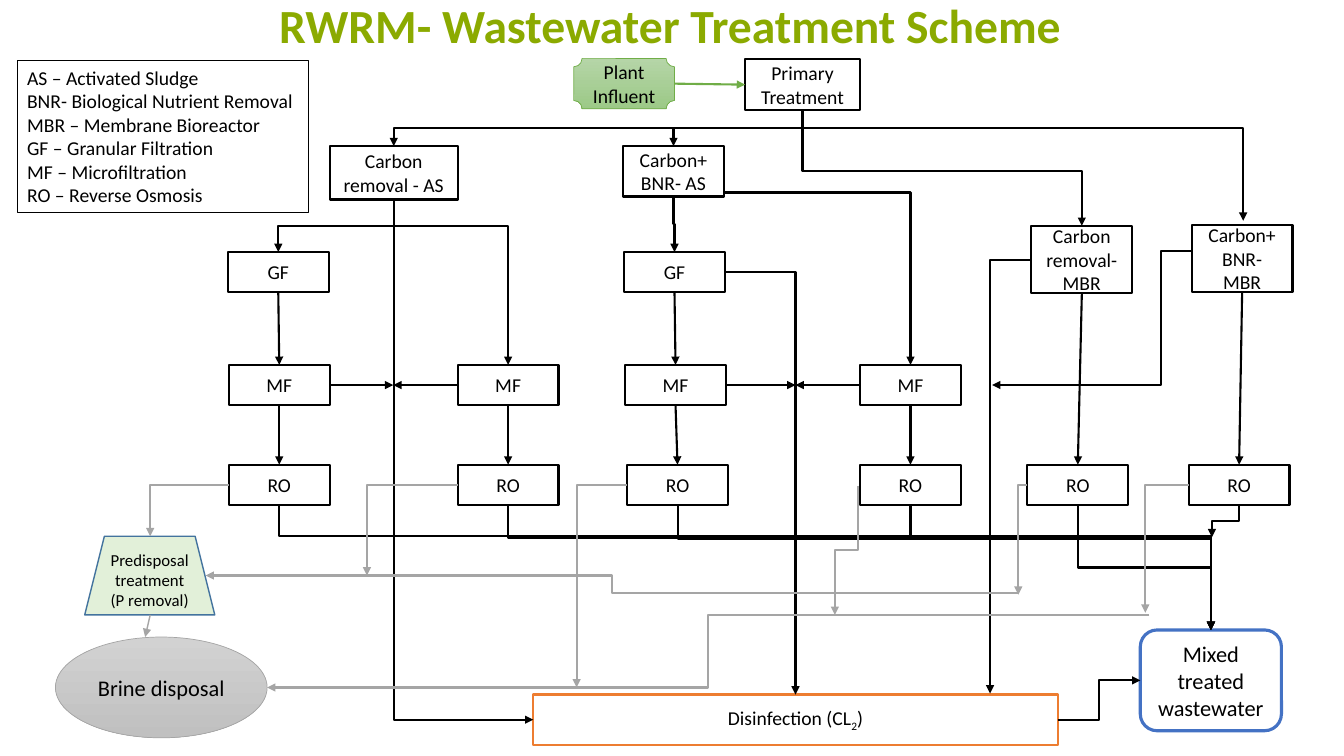
import pptx
import pptx.dml.color
import pptx.enum.shapes
import pptx.enum.text
import pptx.oxml
import pptx.oxml.ns
import pptx.util

RGBColor = pptx.dml.color.RGBColor
Shapes = pptx.enum.shapes.MSO_SHAPE
Connectors = pptx.enum.shapes.MSO_CONNECTOR
Align = pptx.enum.text.PP_ALIGN
Anchor = pptx.enum.text.MSO_ANCHOR

BLACK = RGBColor(0x00, 0x00, 0x00)
WHITE = RGBColor(0xFF, 0xFF, 0xFF)
OLIVE = RGBColor(0x8B, 0xAA, 0x00)
GREEN = RGBColor(0x70, 0xAD, 0x47)
LIGHT_GREEN = RGBColor(0xB5, 0xD5, 0xA7)
MID_GREEN = RGBColor(0x9C, 0xC9, 0x87)
PALE_GREEN = RGBColor(0xE2, 0xF0, 0xD9)
GREY = RGBColor(0xA5, 0xA5, 0xA5)
LIGHT_GREY = RGBColor(0xD2, 0xD2, 0xD2)
MID_GREY = RGBColor(0xC0, 0xC0, 0xC0)
ORANGE = RGBColor(0xED, 0x7D, 0x31)
BLUE = RGBColor(0x44, 0x72, 0xC4)
DARK_BLUE = RGBColor(0x43, 0x73, 0x9E)
TOP, LEFT, BOTTOM, RIGHT = range(4)


def inches(value):
    return pptx.util.Cm(value * 2.54)


def write_text(frame, text, size=14, color=BLACK, bold=False,
               align=Align.CENTER, anchor=Anchor.MIDDLE):
    frame.word_wrap = True
    frame.vertical_anchor = anchor
    for index, line in enumerate(text.split("\n")):
        paragraph = frame.add_paragraph() if index else frame.paragraphs[0]
        paragraph.alignment = align
        for part, piece in enumerate(line.split("_")):
            run = paragraph.add_run()
            run.text = piece
            run.font.name = "Calibri"
            run.font.size = pptx.util.Pt(size)
            run.font.bold = bold
            run.font.color.rgb = color
            if part % 2:
                run.font._element.set("baseline", "-25000")


class FlowSlide:
    def __init__(self, slide):
        self.slide = slide
        self.boxes = {}

    def title(self, text, left, top, width, height):
        title = self.slide.shapes.title
        title.left, title.top = inches(left), inches(top)
        title.width, title.height = inches(width), inches(height)
        write_text(title.text_frame, text, size=34, color=OLIVE, bold=True,
                   anchor=Anchor.BOTTOM)

    def box(self, name, text, left, top, width=1, height=0.4, kind=Shapes.RECTANGLE,
            fill=(), line=BLACK, weight=1.5, **text_format):
        shape = self.slide.shapes.add_shape(
            kind, inches(left), inches(top), inches(width), inches(height))
        shape.shadow.inherit = False
        if len(fill) == 2:
            shape.fill.gradient()
            shape.fill.gradient_angle = 270
            for stop, color in zip(shape.fill.gradient_stops, fill):
                stop.color.rgb = color
        elif fill:
            shape.fill.solid()
            shape.fill.fore_color.rgb = fill[0]
        else:
            shape.fill.background()
        shape.line.color.rgb = line
        shape.line.width = pptx.util.Pt(weight)
        write_text(shape.text_frame, text, **text_format)
        self.boxes[name] = shape

    def point(self, place):
        if not isinstance(place[0], str):
            return inches(place[0]), inches(place[1])
        shape, site = self.boxes[place[0]], place[1]
        across, down = ((1, 0), (0, 1), (1, 2), (2, 1))[site]
        return shape.left + shape.width * across // 2, shape.top + shape.height * down // 2

    def arrow(self, kind, begin, end, color, weight):
        connector = self.slide.shapes.add_connector(kind, *begin, *end)
        connector.line.color.rgb = color
        connector.line.width = pptx.util.Pt(weight)
        tail = pptx.oxml.ns.qn("a:tailEnd")
        connector.line._get_or_add_ln().makeelement(tail)
        pptx.oxml.xmlchemy.OxmlElement("a:tailEnd")
        tail_end = pptx.oxml.xmlchemy.OxmlElement("a:tailEnd")
        tail_end.set("type", "triangle")
        connector.line._get_or_add_ln().append(tail_end)
        connector._element.spPr.append(pptx.oxml.xmlchemy.OxmlElement("a:effectLst"))
        return connector

    def straight(self, begin, end, color=BLACK, weight=1.5):
        connector = self.arrow(Connectors.STRAIGHT, self.point(begin), self.point(end),
                               color, weight)
        if isinstance(begin[0], str):
            connector.begin_connect(self.boxes[begin[0]], begin[1])
        if isinstance(end[0], str):
            connector.end_connect(self.boxes[end[0]], end[1])

    def elbow(self, begin, end, bend=None, down=False, color=BLACK, weight=1.5):
        (x1, y1), (x2, y2) = self.point(begin), self.point(end)
        if down:
            middle_x, middle_y = (x1 + x2) // 2, (y1 + y2) // 2
            half_run, half_drop = (x2 - x1) // 2, (y2 - y1) // 2
            x1, x2 = middle_x - half_drop, middle_x + half_drop
            y1, y2 = middle_y + half_run, middle_y - half_run
        connector = self.arrow(Connectors.ELBOW, (x1, y1), (x2, y2), color, weight)
        properties = connector._element.spPr
        if down:
            properties.find(pptx.oxml.ns.qn("a:xfrm")).set("rot", "5400000")
        geometry = properties.find(pptx.oxml.ns.qn("a:prstGeom"))
        if bend is None:
            geometry.set("prst", "bentConnector2")
        else:
            guide = pptx.oxml.xmlchemy.OxmlElement("a:gd")
            guide.set("name", "adj1")
            guide.set("fmla", f"val {round(bend * 100000)}")
            geometry.find(pptx.oxml.ns.qn("a:avLst")).append(guide)


def main():
    presentation = pptx.Presentation()
    presentation.slide_width, presentation.slide_height = inches(13.33), inches(7.5)
    flow = FlowSlide(presentation.slides.add_slide(presentation.slide_layouts[5]))

    flow.title("RWRM- Wastewater Treatment Scheme", 1.52, -0.33, 10.25, 0.91)
    flow.box("legend", "AS – Activated Sludge\nBNR- Biological Nutrient Removal\n"
             "MBR – Membrane Bioreactor\nGF – Granular Filtration\n"
             "MF – Microfiltration\nRO – Reverse Osmosis", 0.17, 0.6, 2.89, 1.51,
             weight=0.75, align=Align.LEFT, anchor=Anchor.TOP)
    flow.box("influent", "Plant Influent", 5.69, 0.58, 1, 0.5, kind=Shapes.PLAQUE,
             fill=(LIGHT_GREEN, MID_GREEN), line=GREEN, weight=0.5)
    flow.box("primary", "Primary Treatment", 7.39, 0.59, 1.14, 0.5)
    flow.box("carbon AS", "Carbon removal - AS", 3.27, 1.45, 1.27, 0.53)
    flow.box("BNR AS", "Carbon+ BNR- AS", 6.18, 1.45, 1, 0.5)
    flow.box("carbon MBR", "Carbon removal- MBR", 10.23, 2.24, 1, 0.67)
    flow.box("BNR MBR", "Carbon+ BNR- MBR", 11.82, 2.23, 1, 0.67)
    for process, top, lefts in (
            ("GF", 2.5, (2.26, 6.19)),
            ("MF", 3.62, (2.27, 4.54, 6.2, 8.53)),
            ("RO", 4.61, (2.27, 4.54, 6.22, 8.53, 10.19, 11.79))):
        for number, left in enumerate(lefts, 1):
            flow.box(f"{process} {number}", process, left, top)
    flow.box("disinfection", "Disinfection (CL_2_)", 5.29, 6.89, 5.2, 0.5,
             fill=(WHITE,), line=ORANGE)
    flow.box("mixed", "Mixed treated wastewater", 11.31, 6.25, 1.4, 1,
             kind=Shapes.ROUNDED_RECTANGLE, fill=(WHITE,), line=BLUE, weight=2.25, size=16)
    flow.box("brine", "Brine disposal", 0.55, 6.32, 2.1, 1, kind=Shapes.OVAL,
             fill=(LIGHT_GREY, MID_GREY), line=GREY, weight=0.5, size=16)
    flow.box("predisposal", "Predisposal treatment (P removal)", 0.84, 5.32, 1.29, 0.78,
             kind=Shapes.TRAPEZOID, fill=(PALE_GREEN,), line=DARK_BLUE, weight=1, size=12)

    flow.straight(("influent", RIGHT), ("primary", LEFT), color=GREEN)
    for upper, lower in (("GF 1", "MF 1"), ("GF 2", "MF 3"), ("MF 1", "RO 1"),
                         ("MF 3", "RO 3"), ("MF 4", "RO 4"),
                         ("carbon MBR", "RO 5"), ("BNR MBR", "RO 6")):
        flow.straight((upper, BOTTOM), (lower, TOP))
    flow.straight(("MF 2", BOTTOM), ("RO 2", TOP), weight=1)
    for name, side, x in (("MF 1", RIGHT, 3.9), ("MF 2", LEFT, 3.9),
                          ("MF 3", RIGHT, 7.89), ("MF 4", LEFT, 7.89)):
        flow.straight((name, side), (x, 3.82))
    flow.straight((1.49, 6.1), (1.44, 6.32), color=GREY, weight=1)

    for upper, lower, bend in (
            ("carbon AS", "MF 2", 0.16), ("carbon AS", "GF 1", 0.5),
            ("BNR AS", "GF 2", 0.5), ("primary", "carbon MBR", 0.53),
            ("primary", "carbon AS", 0.5), ("primary", "BNR AS", 0.5),
            ("RO 1", "mixed", 0.25), ("RO 2", "mixed", 0.26), ("RO 3", "mixed", 0.27),
            ("RO 4", "mixed", 0.26), ("RO 5", "mixed", 0.5)):
        flow.elbow((upper, BOTTOM), (lower, TOP), bend, down=True)
    flow.elbow(("RO 6", BOTTOM), (12.02, 5.33), 0.5, down=True)
    flow.elbow(("carbon AS", BOTTOM), ("disinfection", LEFT), down=True)
    flow.elbow(("GF 2", RIGHT), ("disinfection", TOP))
    flow.elbow((7.96, 1.27), (12.33, 2.19))
    flow.elbow((7.19, 1.91), ("MF 4", TOP))
    flow.elbow(("carbon MBR", LEFT), (9.82, 6.88))
    flow.elbow((11.81, 2.49), (9.84, 3.82), 0.15)
    flow.elbow(("disinfection", RIGHT), ("mixed", LEFT), 0.5)

    for name, end in (("RO 1", (1.49, 5.32)), ("RO 2", (3.64, 5.71)),
                      ("RO 3", (5.72, 6.82)), ("RO 5", (10.1, 5.9)),
                      ("RO 6", (11.36, 6.08))):
        flow.elbow((name, LEFT), end, color=GREY)
    flow.elbow((8.51, 4.82), (8.28, 6.1), 0.5, down=True, color=GREY)
    flow.elbow((11.4, 6.1), (2.65, 6.82), 0.5, color=GREY)
    flow.elbow((10.1, 5.88), (2.04, 5.71), 0.5, color=GREY)

    presentation.save("out.pptx")


if __name__ == "__main__":
    main()
